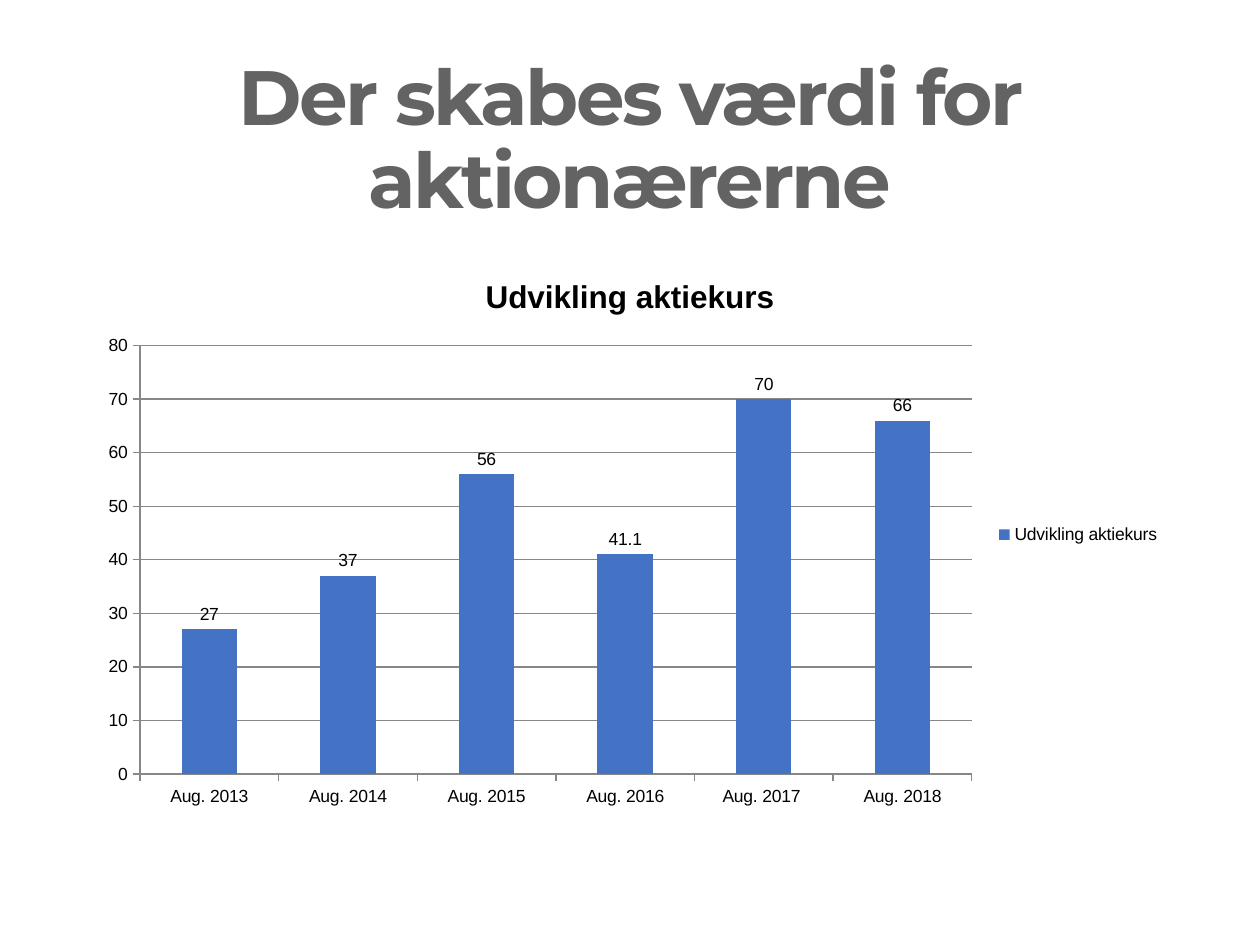
"""Build a slide with a column chart of the yearly share price."""
from dataclasses import dataclass

from pptx import Presentation
from pptx.chart.data import CategoryChartData as ChartData
from pptx.dml.color import RGBColor as Rgb
from pptx.enum.chart import XL_CHART_TYPE as ChartType
from pptx.enum.chart import XL_LABEL_POSITION as LabelPosition
from pptx.enum.chart import XL_LEGEND_POSITION as LegendPosition
from pptx.enum.chart import XL_TICK_MARK as TickMark
from pptx.enum.text import MSO_ANCHOR as Anchor
from pptx.enum.text import PP_ALIGN as Align
from pptx.util import Cm, Pt


@dataclass(frozen=True)
class Theme:
    heading_font: str = "Montserrat"
    body_font: str = "Arial"
    heading: str = "636363"
    text: str = "000000"
    column: str = "4472C4"
    rule: str = "878787"
    heading_size: float = 44
    chart_title_size: float = 18
    label_size: float = 10


def write_text(frame, text, *, font, size, color, bold=False, align=Align.CENTER,
               line_spacing=None, tracking=None):
    para = frame.paragraphs[0]
    para.alignment = align
    if line_spacing:
        para.line_spacing = line_spacing
    span = para.add_run()
    span.text = text
    span.font.name = font
    span.font.size = Pt(size)
    span.font.bold = bold
    span.font.color.rgb = Rgb.from_string(color)
    if tracking is not None:
        span._r.get_or_add_rPr().set("spc", str(round(tracking * 100)))


class SlideBuilder:
    def __init__(self, slide, theme):
        self.slide = slide
        self.theme = theme

    def heading(self, text, left, top, width, height):
        box = self.slide.shapes.add_textbox(Cm(left), Cm(top), Cm(width), Cm(height))
        frame = box.text_frame
        frame.word_wrap = True
        frame.vertical_anchor = Anchor.MIDDLE
        write_text(frame, text, font=self.theme.heading_font,
                   size=self.theme.heading_size, color=self.theme.heading,
                   bold=True, line_spacing=0.9, tracking=-1.5)

    def column_chart(self, name, prices, left, top, width, height):
        theme = self.theme
        data = ChartData()
        data.categories = list(prices)
        data.add_series(name, list(prices.values()))
        chart = self.slide.shapes.add_chart(
            ChartType.COLUMN_CLUSTERED, Cm(left), Cm(top), Cm(width), Cm(height), data
        ).chart
        chart.font.name = theme.body_font
        chart.font.size = Pt(theme.label_size)
        chart.font.color.rgb = Rgb.from_string(theme.text)
        chart.has_title = True
        write_text(chart.chart_title.text_frame, name, font=theme.body_font,
                   size=theme.chart_title_size, color=theme.text, bold=True)
        chart.has_legend = True
        chart.legend.position = LegendPosition.RIGHT
        chart.legend.include_in_layout = False

        plot = chart.plots[0]
        plot.gap_width = 150
        plot.vary_by_categories = False
        plot.has_data_labels = True
        plot.data_labels.show_value = True
        plot.data_labels.position = LabelPosition.OUTSIDE_END
        fill = plot.series[0].format.fill
        fill.solid()
        fill.fore_color.rgb = Rgb.from_string(theme.column)

        value_axis = chart.value_axis
        value_axis.minimum_scale, value_axis.maximum_scale = 0, 80
        value_axis.major_unit = 10
        value_axis.has_major_gridlines = True
        for axis in (chart.category_axis, value_axis):
            axis.major_tick_mark = TickMark.OUTSIDE
            axis.minor_tick_mark = TickMark.NONE
        for part in (chart.category_axis, value_axis, value_axis.major_gridlines):
            part.format.line.color.rgb = Rgb.from_string(theme.rule)
            part.format.line.width = Pt(0.75)


def main():
    deck = Presentation()
    deck.slide_width, deck.slide_height = Cm(25.4), Cm(19.05)
    page = SlideBuilder(deck.slides.add_slide(deck.slide_layouts[6]), Theme())
    left, width = 1.75, 21.9
    page.heading("Der skabes værdi for aktionærerne", left, 1.02, width, 3.68)
    prices = {
        "Aug. 2013": 27,
        "Aug. 2014": 37,
        "Aug. 2015": 56,
        "Aug. 2016": 41.1,
        "Aug. 2017 ": 70,
        "Aug. 2018": 66,
    }
    page.column_chart("Udvikling aktiekurs", prices, left, 5.08, width, 11.4)
    deck.save("out.pptx")


if __name__ == "__main__":
    main()
